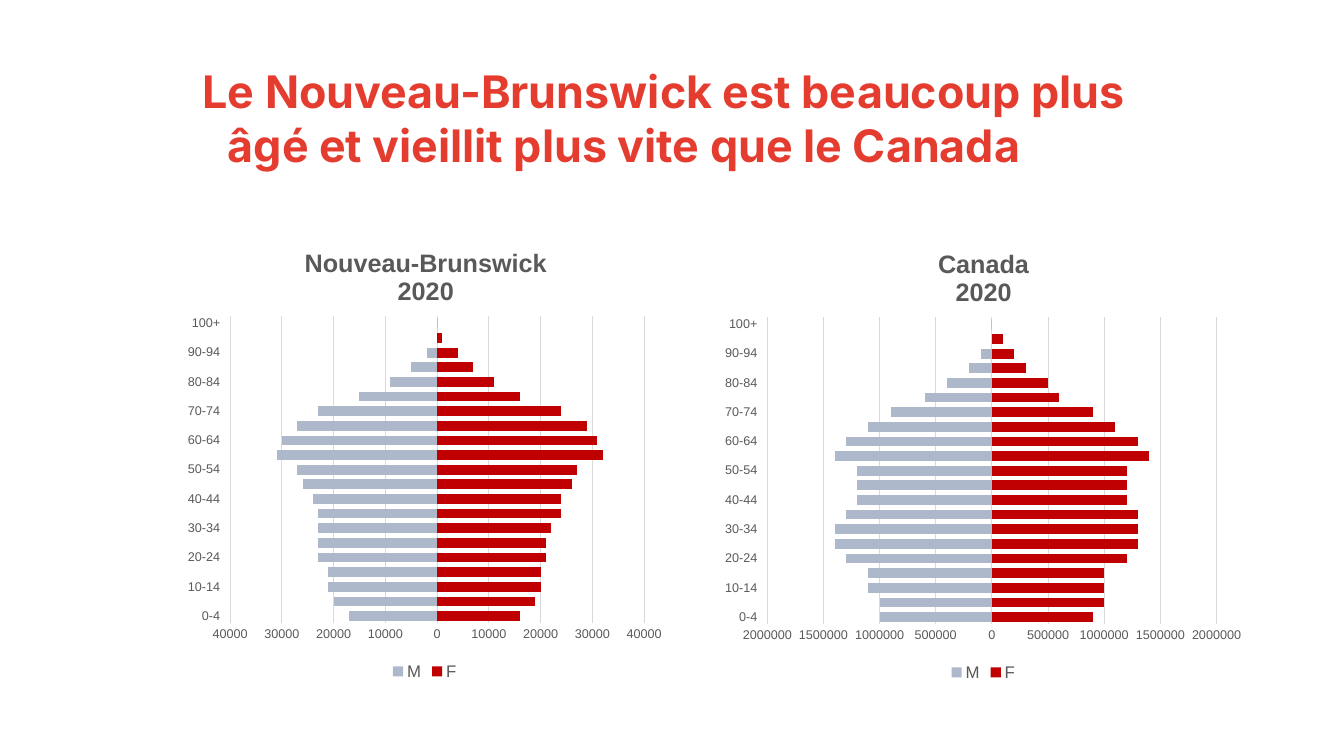
"""Slide comparing the age pyramids of New Brunswick and Canada."""
from lxml import etree
from pptx import Presentation
from pptx.chart.data import CategoryChartData
from pptx.dml.color import RGBColor
from pptx.enum import chart as charts, text
from pptx.oxml import ns
from pptx.util import Pt

COLORS = {"title": "E43D30", "label": "595959", "grid": "D9D9D9",
          "M": "ADB9CA", "F": "C00000"}


def write_text(frame, content, *, size, color, font, alignment):
    for index, line in enumerate(content.split("\n")):
        paragraph = frame.add_paragraph() if index else frame.paragraphs[0]
        paragraph.alignment = alignment
        run = paragraph.add_run()
        run.text = line
        run.font.size = Pt(size)
        run.font.bold = True
        run.font.name = font
        run.font.color.rgb = RGBColor.from_string(COLORS[color])


def place(parent, index, **settings):
    for old in parent.findall(ns.qn("c:layout")):
        parent.remove(old)
    layout = etree.Element(ns.qn("c:layout"))
    manual = etree.SubElement(layout, ns.qn("c:manualLayout"))
    for name, value in settings.items():
        etree.SubElement(manual, ns.qn(f"c:{name}")).set("val", str(value))
    parent.insert(index, layout)


presentation = Presentation()
presentation.slide_width = Pt(960)
presentation.slide_height = Pt(540)
slide = presentation.slides.add_slide(presentation.slide_layouts[5])

title = slide.shapes.title
title.left, title.top, title.width, title.height = Pt(119.5), Pt(41.8), Pt(699), Pt(93.6)
title.text_frame.word_wrap = True
title.text_frame.auto_size = text.MSO_AUTO_SIZE.NONE
title.text_frame.vertical_anchor = text.MSO_ANCHOR.TOP
write_text(title.text_frame,
           "Le Nouveau-Brunswick est beaucoup plus âgé et vieillit plus vite que le Canada",
           size=32, color="title", font="Inter", alignment=text.PP_ALIGN.LEFT)
properties = title.text_frame.paragraphs[0]._p.get_or_add_pPr()
properties.set("marL", str(Pt(36)))
properties.set("indent", str(Pt(-18)))

ages = [f"{age}-{age + 4}" for age in range(0, 100, 5)] + ["100+"]
pyramids = [
    {"title": "Nouveau-Brunswick\n2020", "box": (127.4, 161.3, 352.1, 327.6),
     "unit": 1000, "limit": 40000, "title_x": 0.25, "plot": (0.105, 0.84),
     "M": [17, 20, 21, 21, 23, 23, 23, 23, 24, 26, 27, 31, 30, 27, 23, 15, 9, 5, 2, 0, 0],
     "F": [16, 19, 20, 20, 21, 21, 22, 24, 24, 26, 27, 32, 31, 29, 24, 16, 11, 7, 4, 1, 0]},
    {"title": "Canada\n2020", "box": (510.5, 162, 383.8, 327.6),
     "unit": 100000, "limit": 2000000, "title_x": 0.41, "plot": (0.098, 0.836),
     "M": [10, 10, 11, 11, 13, 14, 14, 13, 12, 12, 12, 14, 13, 11, 9, 6, 4, 2, 1, 0, 0],
     "F": [9, 10, 10, 10, 12, 13, 13, 13, 12, 12, 12, 14, 13, 11, 9, 6, 5, 3, 2, 1, 0]},
]

for pyramid in pyramids:
    data = CategoryChartData()
    data.categories = ages
    for sex, sign in (("M", -1), ("F", 1)):
        data.add_series(sex, [sign * count * pyramid["unit"] for count in pyramid[sex]])
    chart = slide.shapes.add_chart(charts.XL_CHART_TYPE.BAR_STACKED,
                                   *map(Pt, pyramid["box"]), data).chart

    chart.has_title = True
    write_text(chart.chart_title.text_frame, pyramid["title"], size=18, color="label",
               font="Arial", alignment=text.PP_ALIGN.CENTER)
    chart.chart_title.include_in_layout = False
    chart.has_legend = True
    chart.legend.position = charts.XL_LEGEND_POSITION.BOTTOM
    chart.legend.include_in_layout = False

    plot = chart.plots[0]
    plot.gap_width = 50
    plot.overlap = 100
    plot.vary_by_categories = False
    for series in plot.series:
        series.invert_if_negative = False
        series.format.fill.solid()
        series.format.fill.fore_color.rgb = RGBColor.from_string(COLORS[series.name])

    age_axis, count_axis = chart.category_axis, chart.value_axis
    for axis in (age_axis, count_axis):
        axis.major_tick_mark = axis.minor_tick_mark = charts.XL_TICK_MARK.NONE
    age_axis.tick_label_position = charts.XL_TICK_LABEL_POSITION.LOW
    count_axis.minimum_scale = -pyramid["limit"]
    count_axis.maximum_scale = pyramid["limit"]
    count_axis.major_unit = pyramid["limit"] / 4
    count_axis.tick_labels.number_format = "0;0"
    count_axis.tick_labels.number_format_is_linked = False
    count_axis.format.line.fill.background()
    for line in (age_axis.format.line, count_axis.major_gridlines.format.line):
        line.color.rgb = RGBColor.from_string(COLORS["grid"])
        line.width = Pt(0.75)

    for font, size in ((chart.font, 10), (age_axis.tick_labels.font, 9),
                       (count_axis.tick_labels.font, 9), (chart.legend.font, 12)):
        font.name = "Arial"
        font.size = Pt(size)
        font.color.rgb = RGBColor.from_string(COLORS["label"])

    chart_element = chart.element.find(ns.qn("c:chart"))
    left, width = pyramid["plot"]
    place(chart_element.find(ns.qn("c:title")), 1, xMode="edge", yMode="edge",
          x=pyramid["title_x"], y=0.04)
    place(chart_element.find(ns.qn("c:plotArea")), 0, layoutTarget="inner",
          xMode="edge", yMode="edge", x=left, y=0.197, w=width, h=0.67)

presentation.save("out.pptx")
